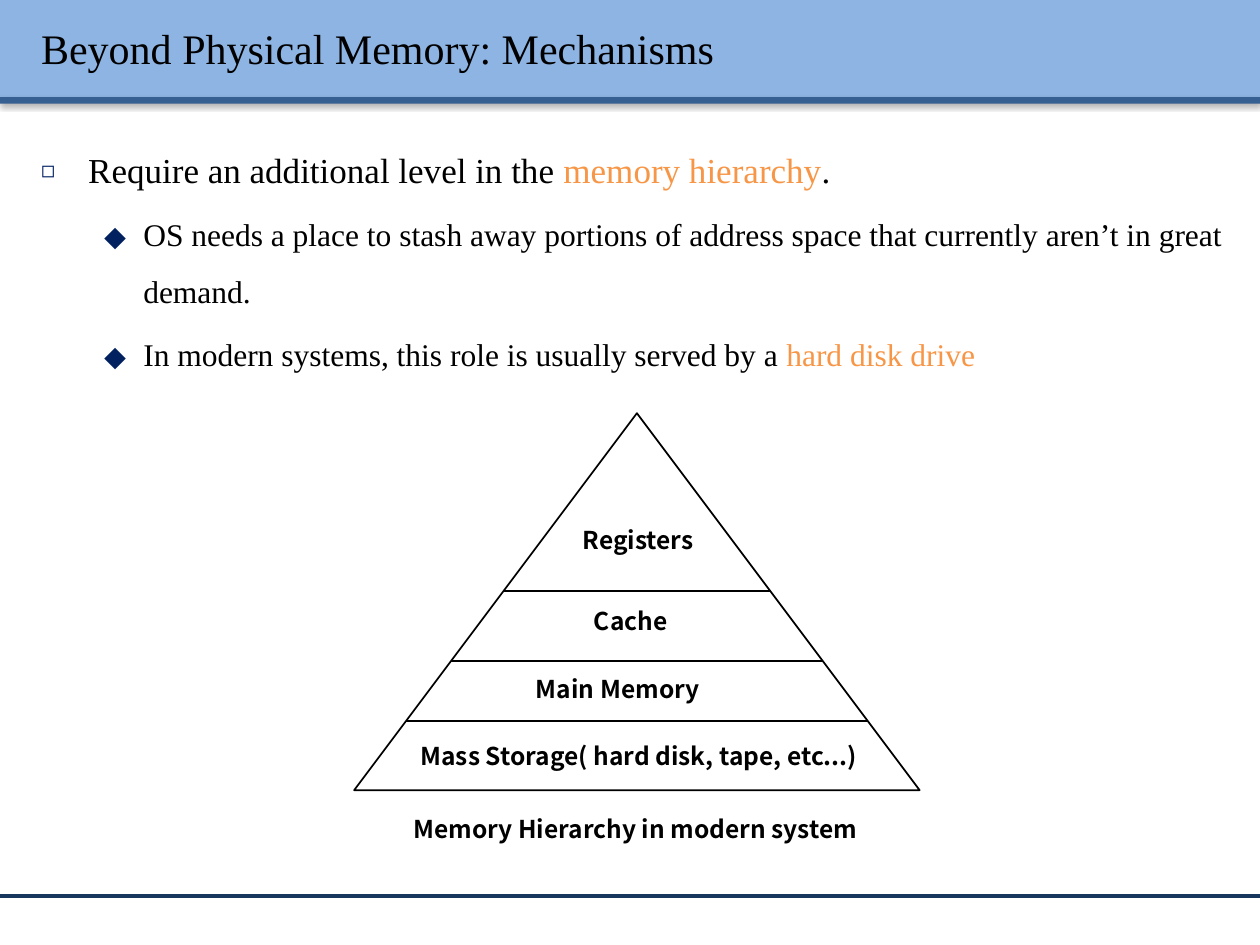
import pptx
import pptx.util
import pptx.dml.color
import pptx.enum.shapes
import pptx.enum.text
import pptx.oxml
import pptx.oxml.ns

Cm, Pt = pptx.util.Cm, pptx.util.Pt
RGBColor = pptx.dml.color.RGBColor
SHAPE = pptx.enum.shapes.MSO_SHAPE
ANCHOR = pptx.enum.text.MSO_ANCHOR
qn = pptx.oxml.ns.qn

BLACK = RGBColor(0, 0, 0)
WHITE = RGBColor(255, 255, 255)
ORANGE = RGBColor(0xF7, 0x96, 0x46)
BAND = RGBColor(0x8E, 0xB4, 0xE3)
STRIPE = RGBColor(0x37, 0x60, 0x92)
FOOT = RGBColor(0x17, 0x37, 0x5E)
BULLET = RGBColor(0x00, 0x20, 0x60)

SERIF, SANS = "Times New Roman", "Noto Sans CJK KR"
WIDTH, HEIGHT = 25.4, 19.05


def element(xml):
    ns = 'xmlns:a="http://schemas.openxmlformats.org/drawingml/2006/main"'
    return pptx.oxml.parse_xml(xml.replace(">", f" {ns}>", 1))


def drop_shadow(blur, dist, angle, alpha):
    return element(
        f'<a:effectLst><a:outerShdw blurRad="{blur}" dist="{dist}" dir="{angle}" rotWithShape="0">'
        f'<a:srgbClr val="000000"><a:alpha val="{alpha}"/></a:srgbClr>'
        '</a:outerShdw></a:effectLst>')


class Deck:
    def __init__(self):
        self.prs = pptx.Presentation()
        self.prs.slide_width, self.prs.slide_height = Cm(WIDTH), Cm(HEIGHT)
        self.s = self.prs.slides.add_slide(self.prs.slide_layouts[6])

    def shape(self, kind, x, y, w, h, fill, line=None, shadow=False):
        sp = self.s.shapes.add_shape(kind, Cm(x), Cm(y), Cm(w), Cm(h))
        sp.shadow.inherit = False
        sp.fill.solid()
        sp.fill.fore_color.rgb = fill
        if line is None:
            sp.line.fill.background()
        else:
            sp.line.color.rgb = line
            sp.line.width = Pt(1)
        if shadow:
            effects = sp._element.spPr.find(qn("a:effectLst"))
            effects.getparent().replace(effects, drop_shadow(40000, 20000, 5400000, 38000))

    def rule(self, x1, x2, y, color=BLACK, width=1):
        """Draw a horizontal line."""
        cx = self.s.shapes.add_connector(
            pptx.enum.shapes.MSO_CONNECTOR.STRAIGHT, Cm(x1), Cm(y), Cm(x2), Cm(y))
        cx.line.color.rgb = color
        cx.line.width = Pt(width)
        cx._element.spPr.append(element("<a:effectLst></a:effectLst>"))

    def text_frame(self, x, y, w, h, anchor=ANCHOR.TOP):
        tf = self.s.shapes.add_textbox(Cm(x), Cm(y), Cm(w), Cm(h)).text_frame
        tf.word_wrap = True
        tf.vertical_anchor = anchor
        return tf

    def run(self, p, text, size, font=SERIF, color=BLACK, bold=False):
        r = p.add_run()
        r.text = text
        r.font.size, r.font.name, r.font.bold = Pt(size), font, bold
        r.font.color.rgb = color
        rPr = r._r.get_or_add_rPr()
        rPr.find(qn("a:latin")).addnext(element(f'<a:ea typeface="{font}"></a:ea>'))
        return r

    def title(self, text):
        tf = self.text_frame(0.58, 0.15, 24.4, 1.63, ANCHOR.MIDDLE)
        r = self.run(tf.paragraphs[0], text, 24)
        fill = r._r.rPr.find(qn("a:solidFill"))
        fill.addnext(drop_shadow(38100, 38100, 2700000, 43000))

    def bullet(self, p, level, parts):
        """Fill a bulleted paragraph with (text, color) runs."""
        char, scale, size, left, hang = [("◻", 65, 20, 0.95, 0.95), ("⬥", 100, 18, 2.06, 0.79)][level]
        p.level = level
        p.line_spacing = 1.5
        p.space_before = Pt(size * 0.2)
        pPr = p._p.get_or_add_pPr()
        pPr.set("marL", str(Cm(left)))
        pPr.set("indent", str(-Cm(hang)))
        for xml in (f'<a:buClr><a:srgbClr val="{BULLET}"/></a:buClr>',
                    f'<a:buSzPct val="{scale * 1000}"></a:buSzPct>',
                    f'<a:buFont typeface="{SANS}"></a:buFont>',
                    f'<a:buChar char="{char}"></a:buChar>'):
            pPr.append(element(xml))
        for text, color in parts:
            self.run(p, text, size, color=color)

    def body(self, items):
        tf = self.text_frame(0.58, 2.44, 24.4, 15.29)
        for i, (level, parts) in enumerate(items):
            p = tf.add_paragraph() if i else tf.paragraphs[0]
            self.bullet(p, level, parts)

    def label(self, text, x, y):
        tf = self.text_frame(x, y, 11.35, 0.86)
        tf.auto_size = pptx.enum.text.MSO_AUTO_SIZE.SHAPE_TO_FIT_TEXT
        p = tf.paragraphs[0]
        p.alignment = pptx.enum.text.PP_ALIGN.CENTER
        self.run(p, text, 14, SANS, bold=True)

    def pyramid(self, x, y, w, h, dividers):
        """Draw a triangle cut by lines that end on its sides."""
        self.shape(SHAPE.ISOSCELES_TRIANGLE, x, y, w, h, WHITE, BLACK)
        middle = x + w / 2
        for cut in dividers:
            half = w / 2 * (cut - y) / h
            self.rule(middle - half, middle + half, cut)


def main():
    deck = Deck()
    deck.shape(SHAPE.RECTANGLE, 0, 0, WIDTH, 1.96, BAND, shadow=True)
    deck.shape(SHAPE.RECTANGLE, 0, 1.96, WIDTH, 0.13, STRIPE, shadow=True)
    deck.rule(0, WIDTH, 18.06, FOOT, 2)
    deck.title("Beyond Physical Memory: Mechanisms")
    deck.body([
        (0, [("Require an additional level in the ", BLACK),
             ("memory hierarchy", ORANGE), (".", BLACK)]),
        (1, [("OS needs a place to stash away portions of address space "
              "that currently aren’t in great demand.", BLACK)]),
        (1, [("In modern systems, this role is usually served by a ", BLACK),
             ("hard disk drive", ORANGE)]),
    ])
    deck.pyramid(7.14, 8.33, 11.4, 7.6, dividers=[11.91, 13.33, 14.53])
    for text, x, y in [
        ("Registers", 7.19, 10.46),
        ("Cache", 7.04, 12.09),
        ("Main Memory", 6.78, 13.46),
        ("Mass Storage( hard disk, tape, etc...)", 7.21, 14.81),
        ("Memory Hierarchy in modern system", 7.14, 16.28),
    ]:
        deck.label(text, x, y)
    deck.prs.save("out.pptx")


if __name__ == "__main__":
    main()
